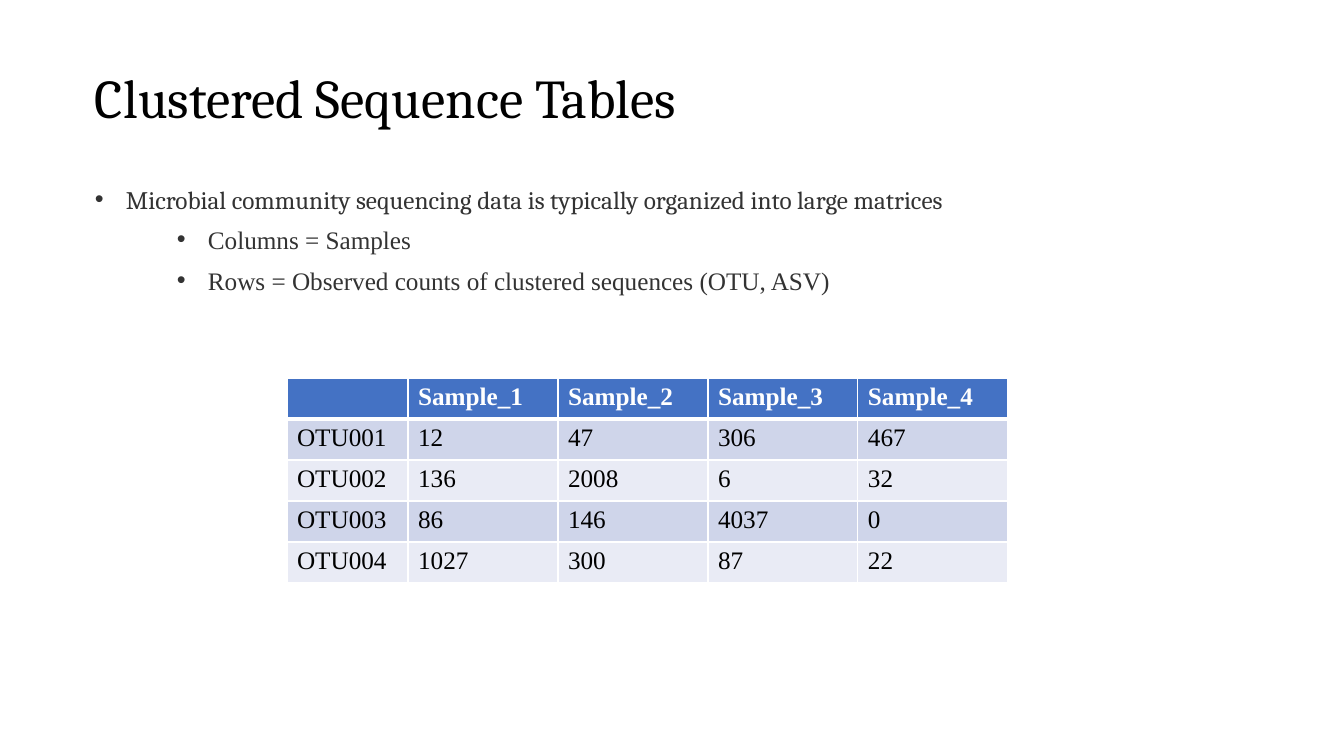
from lxml.etree import SubElement
from pptx import Presentation
from pptx.dml.color import RGBColor
from pptx.enum.text import MSO_ANCHOR, MSO_AUTO_SIZE
from pptx.oxml.ns import qn
from pptx.util import Emu, Pt

EMU_PER_PX = 914400 / 100.8
SERIF = "Times New Roman"
HEADING = "Cambria"
WHITE, BLACK, GREY = "FFFFFF", "000000", "333333"
HEADER_FILL, ODD_FILL, EVEN_FILL = "4472C4", "CFD5EA", "E9EBF5"
BULLET_INDENT = 31

BULLETS = [
    (85, 179, 1126, HEADING,
     "Microbial community sequencing data is typically organized into large matrices"),
    (167, 219, 672, SERIF, "Columns = Samples"),
    (167, 260, 1126, SERIF, "Rows = Observed counts of clustered sequences (OTU, ASV)"),
]
COUNTS = [
    ("", "Sample_1", "Sample_2", "Sample_3", "Sample_4"),
    ("OTU001", "12", "47", "306", "467"),
    ("OTU002", "136", "2008", "6", "32"),
    ("OTU003", "86", "146", "4037", "0"),
    ("OTU004", "1027", "300", "87", "22"),
]
COLUMN_WIDTHS = [121, 150, 150, 150, 150]
ROW_HEIGHT = 41


def px(length):
    return Emu(round(length * EMU_PER_PX))


def color(value):
    return RGBColor.from_string(value)


def style_font(paragraph, name, size, ink, bold=False):
    font = paragraph.font
    font.name, font.size, font.bold = name, Pt(size), bold
    font.color.rgb = color(ink)


def add_text(slide, left, top, width, height, text):
    frame = slide.shapes.add_textbox(px(left), px(top), px(width), px(height)).text_frame
    frame.word_wrap = True
    frame.text = text
    return frame


def add_title(slide, text):
    frame = add_text(slide, 85, 60, 979, 82, text)
    frame.vertical_anchor = MSO_ANCHOR.MIDDLE
    title = frame.paragraphs[0]
    title.line_spacing = 0.9
    style_font(title, HEADING, 39, BLACK)


def add_bullet(slide, left, top, width, font_name, text):
    frame = add_text(slide, left, top, width, 40, text)
    frame.auto_size = MSO_AUTO_SIZE.SHAPE_TO_FIT_TEXT
    bullet = frame.paragraphs[0]
    properties = bullet._p.get_or_add_pPr()
    properties.set("marL", str(px(BULLET_INDENT)))
    properties.set("indent", str(-px(BULLET_INDENT)))
    SubElement(properties, qn("a:buFont"), typeface="Arial")
    SubElement(properties, qn("a:buChar"), char="•")
    style_font(bullet, font_name, 18, GREY)


def add_borders(cell, top, bottom):
    """Draw white cell borders; top and bottom are widths in points."""
    properties = cell._tc.get_or_add_tcPr()
    for side, width in (("L", 1), ("R", 1), ("T", top), ("B", bottom)):
        line = SubElement(properties, qn(f"a:ln{side}"), w=str(Pt(width)))
        fill = SubElement(line, qn("a:solidFill"))
        SubElement(fill, qn("a:srgbClr"), val=WHITE)


def add_count_table(slide, left, top):
    table = slide.shapes.add_table(
        len(COUNTS), len(COLUMN_WIDTHS), px(left), px(top),
        px(sum(COLUMN_WIDTHS)), px(ROW_HEIGHT * len(COUNTS))).table
    for column, width in zip(table.columns, COLUMN_WIDTHS):
        column.width = px(width)
    for r, values in enumerate(COUNTS):
        table.rows[r].height = px(ROW_HEIGHT)
        is_header = r == 0
        row_fill = HEADER_FILL if is_header else ODD_FILL if r % 2 else EVEN_FILL
        for c, value in enumerate(values):
            cell = table.cell(r, c)
            cell.text = value
            add_borders(cell, top=3 if r == 1 else 1, bottom=3 if is_header else 1)
            cell.fill.solid()
            cell.fill.fore_color.rgb = color(row_fill)
            style_font(cell.text_frame.paragraphs[0], SERIF, 18,
                       WHITE if is_header else BLACK, bold=is_header)


def main():
    presentation = Presentation()
    presentation.slide_width, presentation.slide_height = px(1344), px(756)
    slide = presentation.slides.add_slide(presentation.slide_layouts[6])
    add_title(slide, "Clustered Sequence Tables")
    for bullet in BULLETS:
        add_bullet(slide, *bullet)
    add_count_table(slide, 287, 378)
    presentation.save("out.pptx")


if __name__ == "__main__":
    main()
